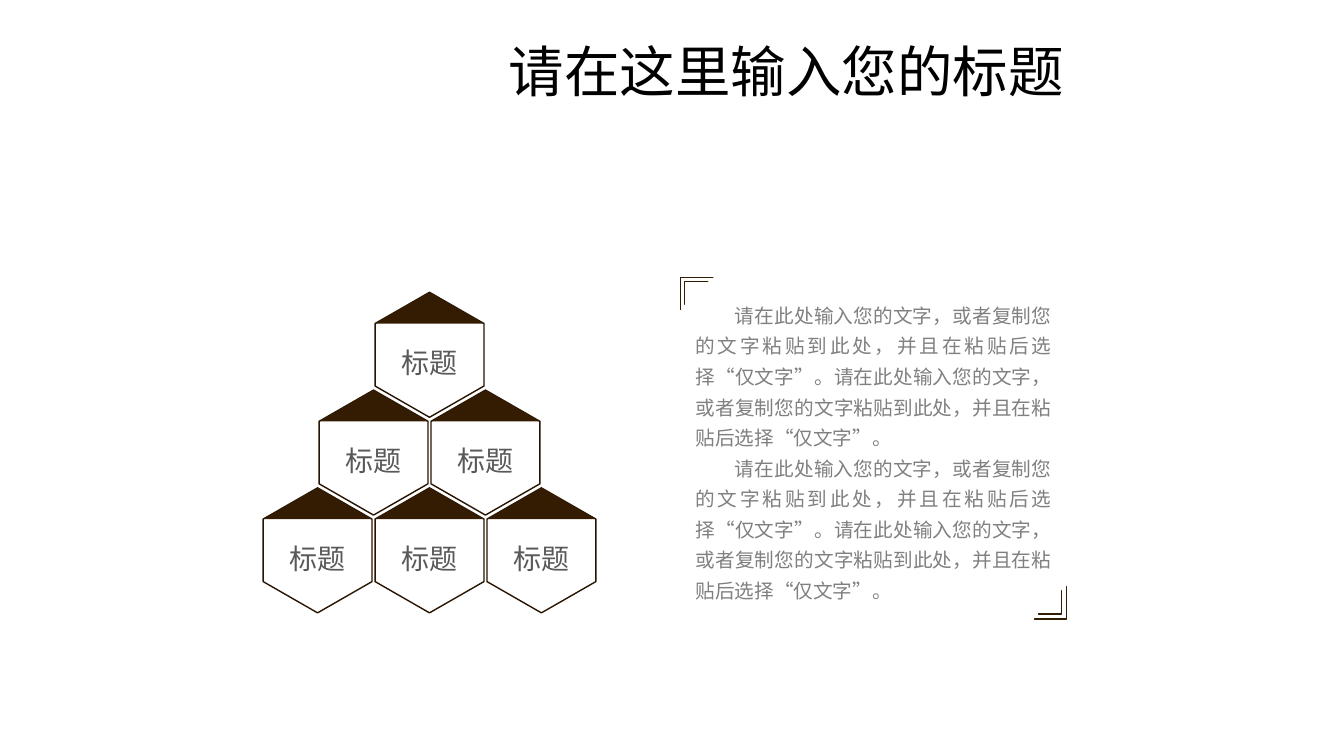
from lxml import etree
from pptx import Presentation
from pptx.dml.color import RGBColor
from pptx.enum.shapes import MSO_SHAPE
from pptx.enum.text import MSO_ANCHOR, PP_ALIGN
from pptx.oxml.ns import qn
from pptx.util import Inches, Pt

HALF_FRAME = MSO_SHAPE.HALF_FRAME
MIDDLE = MSO_ANCHOR.MIDDLE
LEFT, CENTER, JUSTIFY = PP_ALIGN.LEFT, PP_ALIGN.CENTER, PP_ALIGN.JUSTIFY

HEADING = "请在这里输入您的标题"
SENTENCE = "请在此处输入您的文字，或者复制您的文字粘贴到此处，并且在粘贴后选择“仅文字”。"
LABEL = "标题"
CJK_FONT = "Noto Sans CJK SC"
BROWN, OUTLINE = "341C03", "271502"


def color(value):
    return RGBColor.from_string(value)


def set_attributes(target, values):
    for name, value in values.items():
        setattr(target, name, value)


class SlideBuilder:
    heading = {"size": Pt(39.6), "name": "Calibri"}
    body = {"size": Pt(14), "name": CJK_FONT}
    label = {"size": Pt(20), "name": CJK_FONT}

    def __init__(self, slide):
        self.slide = slide

    def paint(self, shape, fill=None, line=None):
        shape.shadow.inherit = False
        if fill:
            shape.fill.solid()
            shape.fill.fore_color.rgb = color(fill)
        else:
            shape.fill.background()
        if line:
            shape.line.color.rgb = color(line)
            shape.line.width = Pt(1)
        else:
            shape.line.fill.background()

    def add_text(self, shape, texts, font, text_color, layout, indent=0, top_inset=0.05):
        frame = shape.text_frame
        set_attributes(frame, {
            "word_wrap": True,
            "vertical_anchor": MIDDLE,
            "margin_top": Inches(top_inset),
        })
        for index, text in enumerate(texts):
            paragraph = frame.paragraphs[0] if index == 0 else frame.add_paragraph()
            set_attributes(paragraph, layout)
            if indent:
                properties = paragraph._p.get_or_add_pPr()
                properties.set("marL", "0")
                properties.set("indent", str(Inches(indent)))
            run = paragraph.add_run()
            run.text = text
            set_attributes(run.font, font)
            run.font.color.rgb = color(text_color)
            latin = run._r.get_or_add_rPr().find(qn("a:latin"))
            east_asian = etree.Element(qn("a:ea"), typeface=CJK_FONT)
            latin.addnext(east_asian)

    def text_box(self, left, top, width, height, texts, font, text_color, layout, indent=0):
        box = self.slide.shapes.add_textbox(
            Inches(left), Inches(top), Inches(width), Inches(height))
        self.add_text(box, texts, font, text_color, layout, indent)

    def corner(self, left, top, rotation):
        group = self.slide.shapes.add_group_shape()
        for offset, size in ((0, 0.32), (0.04, 0.23)):
            frame = group.shapes.add_shape(
                HALF_FRAME, Inches(left + offset), Inches(top + offset),
                Inches(size), Inches(size))
            frame.adjustments[0] = frame.adjustments[1] = 0
            frame.rotation = rotation
            self.paint(frame, line=BROWN)

    def polygon(self, points, fill=None, line=None):
        start, *rest = [(Inches(x), Inches(y)) for x, y in points]
        builder = self.slide.shapes.build_freeform(*start)
        builder.add_line_segments(rest, close=True)
        shape = builder.convert_to_shape()
        self.paint(shape, fill, line)
        return shape

    def house(self, middle, top):
        left, right = middle - 0.54, middle + 0.54
        eave, wall_end, bottom = top + 0.31, top + 0.93, top + 1.24
        hexagon = self.polygon(
            [(middle, top), (right, eave), (right, wall_end),
             (middle, bottom), (left, wall_end), (left, eave)], line=OUTLINE)
        self.add_text(hexagon, [LABEL], self.label, "595959",
                      {"alignment": CENTER}, top_inset=0.2)
        self.polygon([(middle, top), (right, eave), (left, eave)], fill=BROWN)


def main():
    presentation = Presentation()
    presentation.slide_width = Inches(13.33)
    presentation.slide_height = Inches(7.5)
    builder = SlideBuilder(
        presentation.slides.add_slide(presentation.slide_layouts[6]))

    builder.text_box(6.8, 2.79, 3.73, 3.34, [SENTENCE * 2] * 2, builder.body, "808080",
                     {"alignment": JUSTIFY, "line_spacing": 1.3}, indent=0.39)
    builder.corner(6.75, 2.75, 0)
    builder.corner(10.26, 5.82, 180)

    for row in range(3):
        for column in range(row + 1):
            builder.house(4.26 + (column - row / 2) * 1.11, 2.9 + row * 0.97)

    builder.text_box(4.95, 0.41, 8.57, 0.66, [HEADING], builder.heading, "000000",
                     {"alignment": LEFT, "line_spacing": 0.9})
    presentation.save("out.pptx")


if __name__ == "__main__":
    main()
